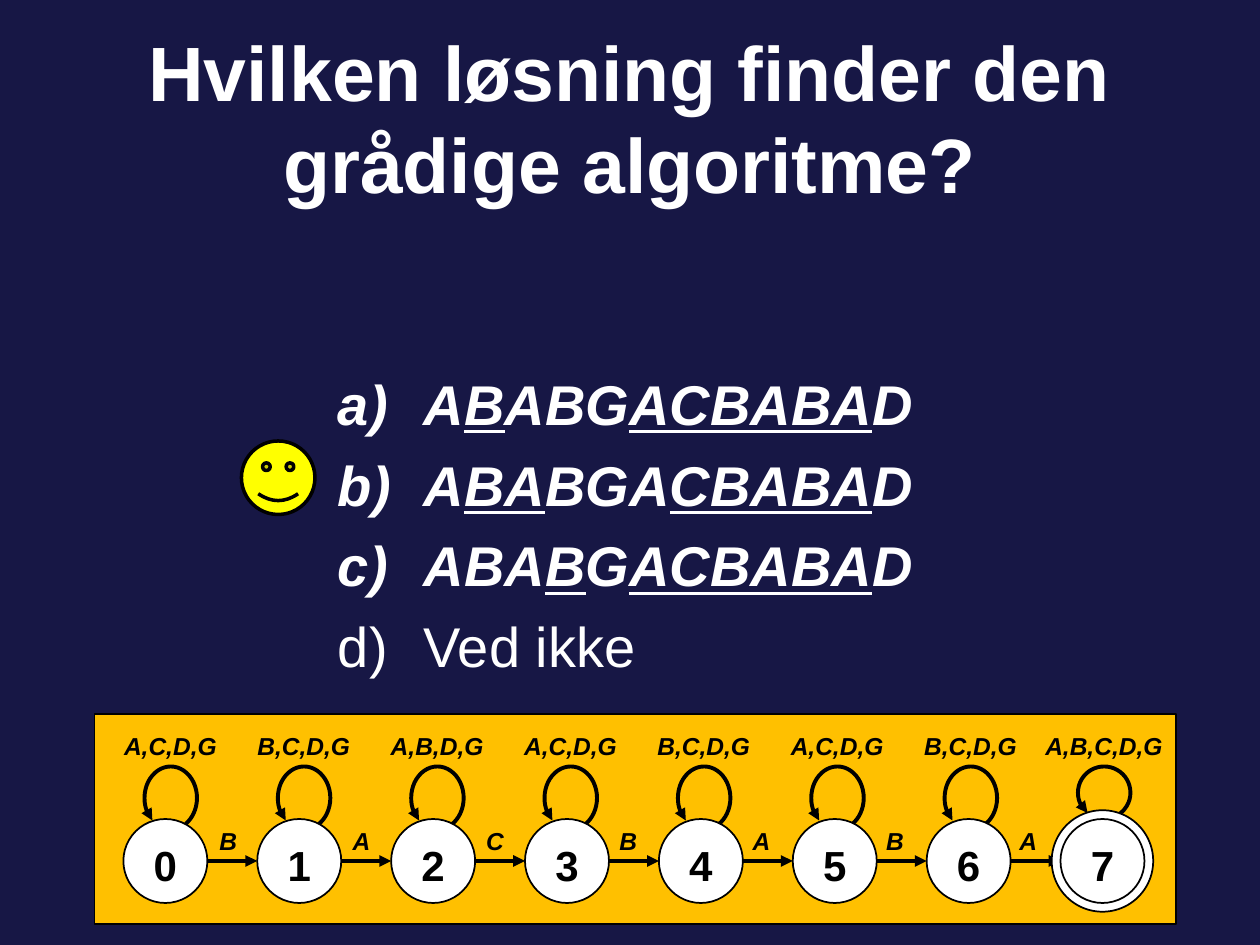
import lxml.etree
import pptx
import pptx.dml.color
import pptx.enum.shapes
import pptx.enum.text
import pptx.oxml.ns
import pptx.util

Pt = pptx.util.Pt
RGBColor = pptx.dml.color.RGBColor
MSO_SHAPE = pptx.enum.shapes.MSO_SHAPE
MSO_ANCHOR = pptx.enum.text.MSO_ANCHOR
MSO_AUTO_SIZE = pptx.enum.text.MSO_AUTO_SIZE
PP_ALIGN = pptx.enum.text.PP_ALIGN
qn = pptx.oxml.ns.qn

NAVY = RGBColor(0x17, 0x17, 0x45)
WHITE = RGBColor(0xFF, 0xFF, 0xFF)
BLACK = RGBColor(0x00, 0x00, 0x00)
YELLOW = RGBColor(0xFF, 0xFF, 0x00)
AMBER = RGBColor(0xFF, 0xC0, 0x00)

# Each answer is a list of (text, underlined) pieces
ANSWERS = [
    [("A", False), ("B", True), ("ABG", False), ("ACBABA", True), ("D", False)],
    [("A", False), ("BA", True), ("BGA", False), ("CBABA", True), ("D", False)],
    [("ABA", False), ("B", True), ("G", False), ("ACBABA", True), ("D", False)],
]
UNKNOWN_ANSWER = "Ved ikke"

# Automaton: the letters looping on each state, and those leading onwards
LOOP_LABELS = ["A,C,D,G", "B,C,D,G", "A,B,D,G", "A,C,D,G",
               "B,C,D,G", "A,C,D,G", "B,C,D,G", "A,B,C,D,G"]
STEP_LABELS = "BACBABA"
STATE_LEFT, STATE_TOP, STATE_SIZE = 70.5, 468, 48
STATE_PITCH = 76.5
LABEL_PITCH = 76.2
RING_GAP = 5


def set_font(paragraph, size, color, bold=False, italic=False):
    font = paragraph.font
    font.name, font.size = "Arial", Pt(size)
    font.bold, font.italic = bold, italic
    font.color.rgb = color


def add_filled_shape(shapes, kind, left, top, width, height, fill, line_width):
    shape = shapes.add_shape(kind, Pt(left), Pt(top), Pt(width), Pt(height))
    shape.shadow.inherit = False
    shape.fill.solid()
    shape.fill.fore_color.rgb = fill
    shape.line.color.rgb = BLACK
    shape.line.width = Pt(line_width)
    return shape


def style_arrow(shape, end_tag):
    shape.line.color.rgb = BLACK
    shape.line.width = Pt(2.25)
    line = shape.element.spPr.find(qn("a:ln"))
    lxml.etree.SubElement(line, qn(end_tag), type="triangle")


def add_title(slide, text):
    title = slide.shapes.title
    title.left, title.top = Pt(36), Pt(21.6)
    title.width, title.height = Pt(648), Pt(90)
    frame = title.text_frame
    frame.text = text
    frame.auto_size = MSO_AUTO_SIZE.NONE
    frame.vertical_anchor = MSO_ANCHOR.MIDDLE
    paragraph = frame.paragraphs[0]
    paragraph.alignment = PP_ALIGN.CENTER
    set_font(paragraph, 44, WHITE, bold=True)


def format_answer(paragraph, emphasised):
    set_font(paragraph, 32, WHITE, bold=emphasised, italic=emphasised)
    paragraph.space_before = Pt(7.8)
    properties = paragraph._p.get_or_add_pPr()
    properties.set("marL", str(Pt(49)))
    properties.set("indent", str(-Pt(49)))
    number_font = lxml.etree.Element(qn("a:buFont"), typeface="+mj-lt")
    numbering = lxml.etree.Element(qn("a:buAutoNum"), type="alphaLcParenR")
    run_defaults = properties.find(qn("a:defRPr"))
    run_defaults.addprevious(number_font)
    run_defaults.addprevious(numbering)


def add_answers(slide):
    box = slide.shapes.add_textbox(Pt(186), Pt(207.5), Pt(408), Pt(260.5))
    frame = box.text_frame
    frame.word_wrap = True
    for index, pieces in enumerate(ANSWERS + [[(UNKNOWN_ANSWER, False)]]):
        paragraph = frame.add_paragraph() if index else frame.paragraphs[0]
        emphasised = index < len(ANSWERS)
        format_answer(paragraph, emphasised)
        for text, underlined in pieces:
            run = paragraph.add_run()
            run.text = text
            if emphasised:
                # Set on the run so the numbers stay upright and regular
                run.font.bold = run.font.italic = True
            if underlined:
                run.font.underline = True
        if emphasised:
            paragraph.font.bold = paragraph.font.italic = False


def add_label(shapes, text, left, top):
    box = shapes.add_textbox(Pt(left), Pt(top), Pt(84), Pt(24.5))
    box.text_frame.word_wrap = True
    paragraph = box.text_frame.paragraphs[0]
    paragraph.text = text
    paragraph.alignment = PP_ALIGN.CENTER
    set_font(paragraph, 14, BLACK, bold=True, italic=True)


def add_loop(shapes, left, height, end_degrees):
    loop = shapes.add_shape(MSO_SHAPE.ARC, Pt(left), Pt(438), Pt(30), Pt(height))
    loop.shadow.inherit = False
    loop.fill.background()
    # Arc angles count 60000ths of a degree, scaled down by 100000
    loop.adjustments[0] = 129.13 * 0.6
    loop.adjustments[1] = end_degrees * 0.6
    style_arrow(loop, "a:headEnd")


def add_state(shapes, number):
    left = STATE_LEFT + number * STATE_PITCH
    state = add_filled_shape(shapes, MSO_SHAPE.OVAL, left, STATE_TOP,
                             STATE_SIZE, STATE_SIZE, WHITE, 1)
    frame = state.text_frame
    frame.margin_left = frame.margin_right = frame.margin_bottom = 0
    frame.margin_top = Pt(4)
    frame.vertical_anchor = MSO_ANCHOR.MIDDLE
    paragraph = frame.paragraphs[0]
    paragraph.text = str(number)
    paragraph.alignment = PP_ALIGN.CENTER
    set_font(paragraph, 24, BLACK, bold=True)


def add_step(shapes, number):
    start = STATE_LEFT + number * STATE_PITCH + STATE_SIZE
    end = STATE_LEFT + (number + 1) * STATE_PITCH
    middle = STATE_TOP + STATE_SIZE / 2
    step = shapes.add_connector(pptx.enum.shapes.MSO_CONNECTOR.STRAIGHT,
                                Pt(start), Pt(middle), Pt(end), Pt(middle))
    style_arrow(step, "a:tailEnd")
    lxml.etree.SubElement(step.element.spPr, qn("a:effectLst"))


def add_automaton(slide):
    shapes = slide.shapes.add_group_shape().shapes
    add_filled_shape(shapes, MSO_SHAPE.RECTANGLE, 54, 408, 618, 120, AMBER, 0.75)
    last = len(LOOP_LABELS) - 1

    # Loops lie behind the states
    for number, text in enumerate(LOOP_LABELS):
        height, end_degrees = (30, 54) if number == last else (36, 60)
        add_loop(shapes, 82.6 + number * LABEL_PITCH, height, end_degrees)
        add_label(shapes, text, 55.4 + number * LABEL_PITCH, 414)

    # States with the steps between them
    for number, text in enumerate(STEP_LABELS):
        add_state(shapes, number)
        add_step(shapes, number)
        add_label(shapes, text, 88.4 + number * LABEL_PITCH, 468.6)

    # Accepting state with its outer ring
    ring_size = STATE_SIZE + 2 * RING_GAP
    add_filled_shape(shapes, MSO_SHAPE.OVAL,
                     STATE_LEFT + last * STATE_PITCH - RING_GAP,
                     STATE_TOP - RING_GAP, ring_size, ring_size, WHITE, 1)
    add_state(shapes, last)


def main():
    presentation = pptx.Presentation()
    presentation.slide_width, presentation.slide_height = Pt(720), Pt(540)
    slide = presentation.slides.add_slide(presentation.slide_layouts[5])
    slide.background.fill.solid()
    slide.background.fill.fore_color.rgb = NAVY

    add_title(slide, "Hvilken løsning finder den grådige algoritme?")
    add_answers(slide)
    # Smiley beside the correct answer
    add_filled_shape(slide.shapes, MSO_SHAPE.SMILEY_FACE,
                     138, 252, 42, 42, YELLOW, 2)
    add_automaton(slide)
    presentation.save("out.pptx")


if __name__ == "__main__":
    main()
